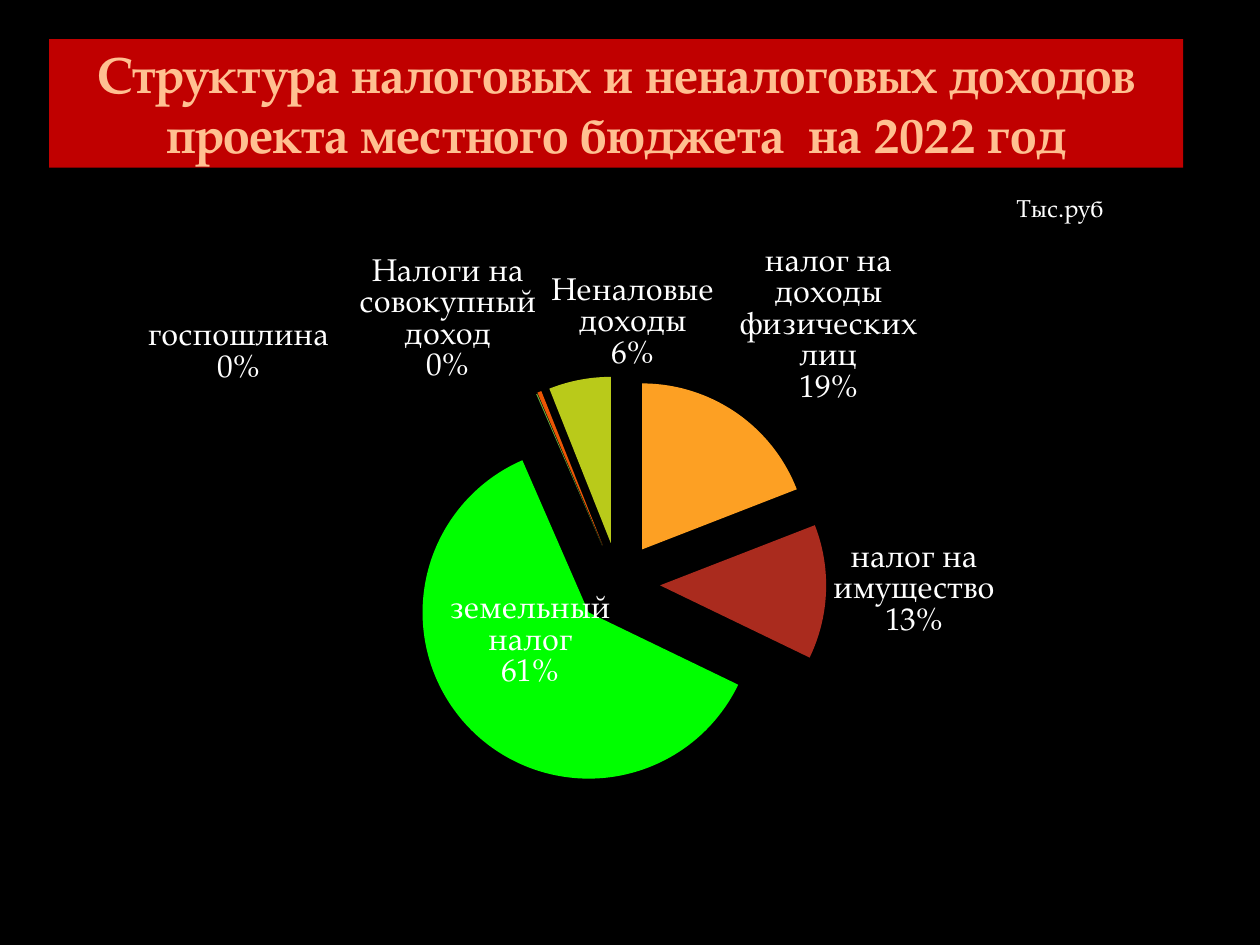
from pptx import Presentation
from pptx.chart.data import CategoryChartData
from pptx.dml.color import RGBColor
from pptx.enum.chart import XL_CHART_TYPE as Chart, XL_LABEL_POSITION as LabelPos
from pptx.enum.shapes import MSO_SHAPE as Shape
from pptx.enum.text import MSO_ANCHOR as Anchor, PP_ALIGN as Align
from pptx.oxml import parse_xml
from pptx.oxml.ns import nsdecls, qn
from pptx.util import Inches, Pt

FONT = "TeX Gyre Pagella"
WHITE = "FFFFFF"
SLICES = [
    ("налог на доходы физических лиц", 19, "FDA023"),
    ("налог на имущество", 13, "AA2B1E"),
    ("земельный налог", 61, "00FF00"),
    ("госпошлина", 0.1, "64A73B"),
    ("Налоги на совокупный доход", 0.4, "EB5605"),
    ("Неналовые доходы", 6, "B9CA1A"),
]
LABEL_SHIFTS = {2: (0.13, -0.21), 3: (-0.18, 0), 5: (0.12, 0)}
PIE_AREA = (0.3, 0.24, 0.38, 0.64)


def rgb(value):
    return RGBColor.from_string(value)


def style(font, size, color=WHITE, bold=False):
    font.name = FONT
    font.size = Pt(size)
    font.bold = bold
    font.color.rgb = rgb(color)


def write(p, text, align=Align.LEFT, **fmt):
    p.alignment = align
    r = p.add_run()
    r.text = text
    style(r.font, **fmt)


def layout(x, y, w=None, h=None):
    modes = "" if w is None else (
        '<c:layoutTarget val="inner"/><c:xMode val="edge"/><c:yMode val="edge"/>')
    size = "" if w is None else f'<c:w val="{w}"/><c:h val="{h}"/>'
    return parse_xml(
        f'<c:layout {nsdecls("c")}><c:manualLayout>{modes}'
        f'<c:x val="{x}"/><c:y val="{y}"/>{size}</c:manualLayout></c:layout>')


def show_name_and_percent(labels):
    for tag, val in (("showVal", "0"), ("showCatName", "1"), ("showPercent", "1")):
        labels.find(qn(f"c:{tag}")).set("val", val)
    after = labels.find(qn("c:showBubbleSize"))
    if after is None:
        after = labels.find(qn("c:showPercent"))
    after.addnext(parse_xml(f'<c:separator {nsdecls("c")}>\n</c:separator>'))


def add_title(s, box):
    sp = s.shapes.add_shape(Shape.RECTANGLE, *box)
    sp.shadow.inherit = False
    sp.fill.solid()
    sp.fill.fore_color.rgb = rgb("C00000")
    sp.line.fill.background()
    tf = sp.text_frame
    tf.word_wrap = True
    tf.vertical_anchor = Anchor.MIDDLE
    write(tf.paragraphs[0],
          "Структура налоговых и неналоговых доходов проекта местного бюджета  на 2022 год",
          align=Align.CENTER, size=28.8, color="FFC091", bold=True)


def add_unit(s, box):
    tf = s.shapes.add_textbox(*box).text_frame
    tf.word_wrap = True
    write(tf.paragraphs[0], "Тыс.руб", size=14)


def add_pie(s, box):
    data = CategoryChartData()
    data.categories = [name for name, _, _ in SLICES]
    data.add_series("Series 1", [value for _, value, _ in SLICES])
    chart = s.shapes.add_chart(Chart.PIE, *box, data).chart
    chart.has_legend = False
    chart.has_title = False
    style(chart.font, 18)

    plot = chart.plots[0]
    plot.vary_by_categories = True
    series = plot.series[0]
    for i, (_, _, color) in enumerate(SLICES):
        fill = series.points[i].format.fill
        fill.solid()
        fill.fore_color.rgb = rgb(color)
    ser = series._element
    ser.find(qn("c:dPt")).addprevious(
        parse_xml(f'<c:explosion {nsdecls("c")} val="25"/>'))

    labels = series.data_labels
    style(labels.font, 18)
    labels.number_format = "0%"
    labels.number_format_is_linked = False
    labels.position = LabelPos.OUTSIDE_END
    for i in LABEL_SHIFTS:
        label = series.points[i].data_label
        style(label.font, 18)
        label.position = LabelPos.OUTSIDE_END

    group = ser.find(qn("c:dLbls"))
    show_name_and_percent(group)
    for label in group.findall(qn("c:dLbl")):
        idx = label.find(qn("c:idx"))
        idx.addnext(layout(*LABEL_SHIFTS[int(idx.get("val"))]))
        show_name_and_percent(label)

    area = chart._chartSpace.find(f".//{qn('c:plotArea')}")
    for old in area.findall(qn("c:layout")):
        area.remove(old)
    area.insert(0, layout(*PIE_AREA))


def main():
    prs = Presentation()
    prs.slide_width, prs.slide_height = Inches(10), Inches(7.5)
    s = prs.slides.add_slide(prs.slide_layouts[6])
    s.background.fill.solid()
    s.background.fill.fore_color.rgb = rgb("000000")

    def box(*inches):
        return tuple(Inches(v) for v in inches)

    add_title(s, box(0.39, 0.31, 9, 1.02))
    add_pie(s, box(0.5, 1.75, 9, 5.15))
    add_unit(s, box(7.97, 1.48, 1.33, 0.34))
    prs.save("out.pptx")


if __name__ == "__main__":
    main()
